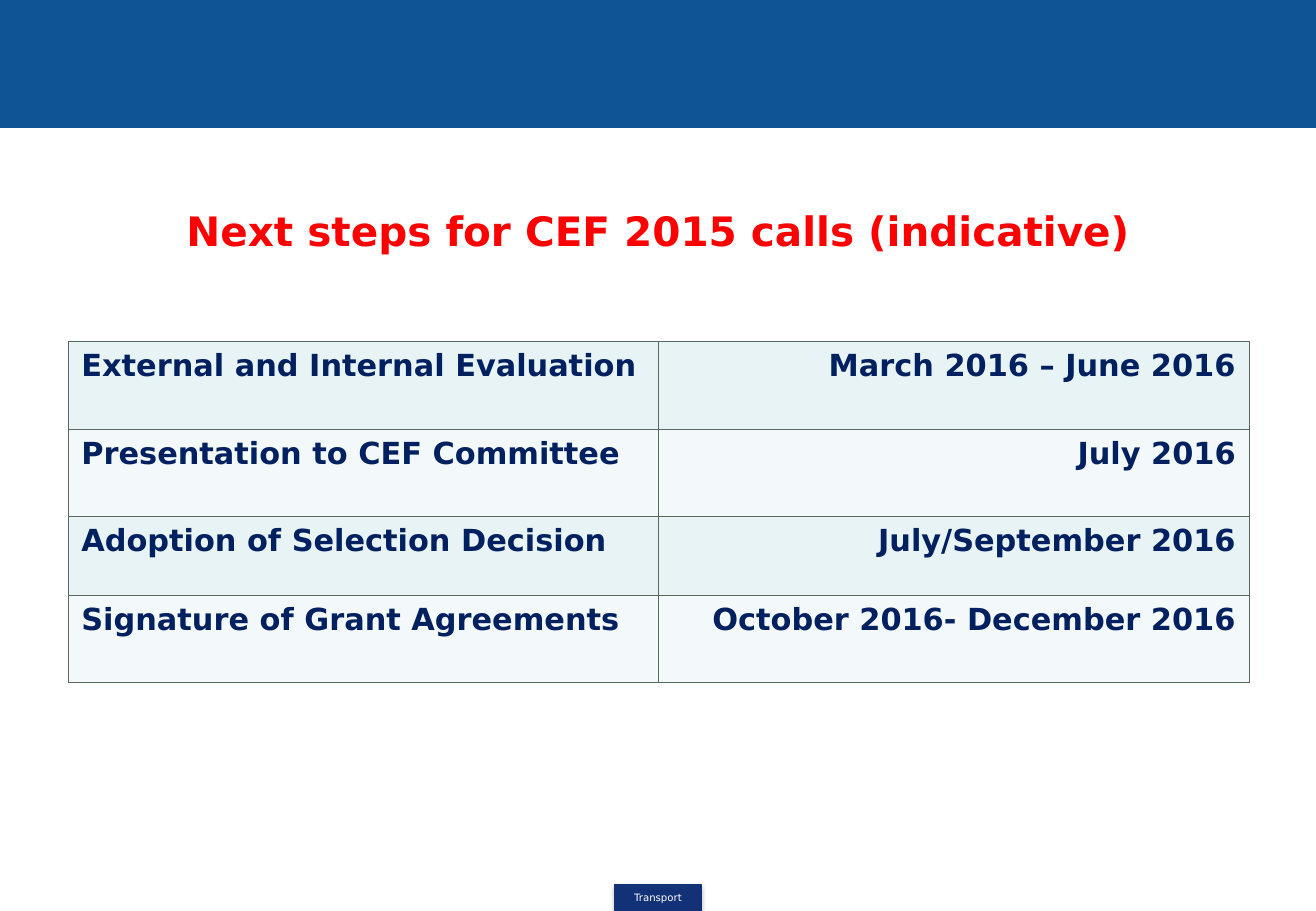
from typing import NamedTuple

from pptx import Presentation
from pptx.dml.color import RGBColor
from pptx.enum.shapes import MSO_SHAPE as Kind
from pptx.enum.text import MSO_ANCHOR as Anchor, MSO_AUTO_SIZE as Fit, PP_ALIGN as Align
from pptx.oxml import parse_xml
from pptx.oxml.ns import nsdecls, qn
from pptx.util import Inches, Pt

FONT = "DejaVu Sans"
NAVY = "002060"
GRID = "57695F"
BANDS = ("E7F3F4", "F3F9FA")


class Step(NamedTuple):
    name: str
    date: str
    height: float = 0.72


class Bar(NamedTuple):
    left: float
    top: float
    width: float
    height: float
    color: str


STEPS = [
    Step("External and Internal Evaluation", "March 2016 – June 2016"),
    Step("Presentation to CEF Committee", "July 2016"),
    Step("Adoption of Selection Decision", "July/September 2016", 0.65),
    Step("Signature of Grant Agreements", "October 2016- December 2016"),
]
HEADER = Bar(0, 0, 10.83, 1.05, "0F5494")
BADGE = Bar(5.06, 7.28, 0.71, 0.22, "133176")


def paint(target, color: str) -> None:
    """Set a solid colour on a fill or a font."""
    if hasattr(target, "solid"):
        target.solid()
        target = target.fore_color
    else:
        target = target.color
    target.rgb = RGBColor.from_string(color)


def write(frame, text: str, *, size: float, color: str, bold: bool = False,
          align: Align = Align.CENTER, spacing: float = 1.0) -> None:
    frame.text = text
    para = frame.paragraphs[0]
    para.alignment = align
    para.line_spacing = spacing
    para.space_before = Pt(0)
    font = para.runs[0].font
    font.name, font.size, font.bold = FONT, Pt(size), bold
    paint(font, color)


def draw_bar(slide, bar: Bar):
    shape = slide.shapes.add_shape(Kind.RECTANGLE, *map(Inches, bar[:4]))
    shape.shadow.inherit = False
    paint(shape.fill, bar.color)
    paint(shape.line.fill, bar.color)
    shape.line.width = Pt(0.75)
    return shape


def cast_shadow(shape) -> None:
    effects = shape._element.spPr.find(qn("a:effectLst"))
    effects.append(parse_xml(
        f'<a:outerShdw {nsdecls("a")} blurRad="{Pt(3.1)}" dist="{Pt(1.8)}" '
        'dir="5400000" rotWithShape="0"><a:srgbClr val="000000">'
        '<a:alpha val="35000"/></a:srgbClr></a:outerShdw>'))


def draw_grid(cell) -> None:
    """Put a thin line on all four sides of a cell."""
    props = cell._tc.get_or_add_tcPr()
    for side in ("lnL", "lnR", "lnT", "lnB"):
        props.append(parse_xml(
            f'<a:{side} {nsdecls("a")} w="{Pt(0.23)}"><a:solidFill>'
            f'<a:srgbClr val="{GRID}"/></a:solidFill></a:{side}>'))


def draw_table(slide, steps: list[Step]) -> None:
    height = sum(step.height for step in steps)
    table = slide.shapes.add_table(
        len(steps), 2, Inches(0.56), Inches(2.81), Inches(9.72), Inches(height)).table
    table.first_row = table.horz_banding = False
    for row, step in enumerate(steps):
        table.rows[row].height = Inches(step.height)
        for col, (text, align) in enumerate(
                [(step.name, Align.LEFT), (step.date, Align.RIGHT)]):
            cell = table.cell(row, col)
            draw_grid(cell)
            paint(cell.fill, BANDS[row % 2])
            cell.margin_left = cell.margin_right = Inches(0.11)
            cell.margin_top = cell.margin_bottom = Inches(0.05)
            write(cell.text_frame, text, size=18, color=NAVY, bold=True,
                  align=align, spacing=1.04)


def draw_title(slide, text: str) -> None:
    title = slide.shapes.title
    title.left, title.top, title.width, title.height = map(
        Inches, (0.21, 1.62, 10.41, 0.55))
    frame = title.text_frame
    frame.auto_size = Fit.NONE
    frame.vertical_anchor = Anchor.MIDDLE
    write(frame, text, size=24, color="FF0000", bold=True)


def main() -> None:
    deck = Presentation()
    deck.slide_width, deck.slide_height = Inches(10.83), Inches(7.5)
    slide = deck.slides.add_slide(deck.slide_layouts[5])
    draw_bar(slide, HEADER)
    badge = draw_bar(slide, BADGE)
    cast_shadow(badge)
    frame = badge.text_frame
    frame.margin_left = frame.margin_right = 0
    frame.vertical_anchor = Anchor.MIDDLE
    write(frame, "Transport", size=6, color="FFFFFF")
    draw_title(slide, "Next steps for CEF 2015 calls (indicative)")
    draw_table(slide, STEPS)
    deck.save("out.pptx")


if __name__ == "__main__":
    main()
